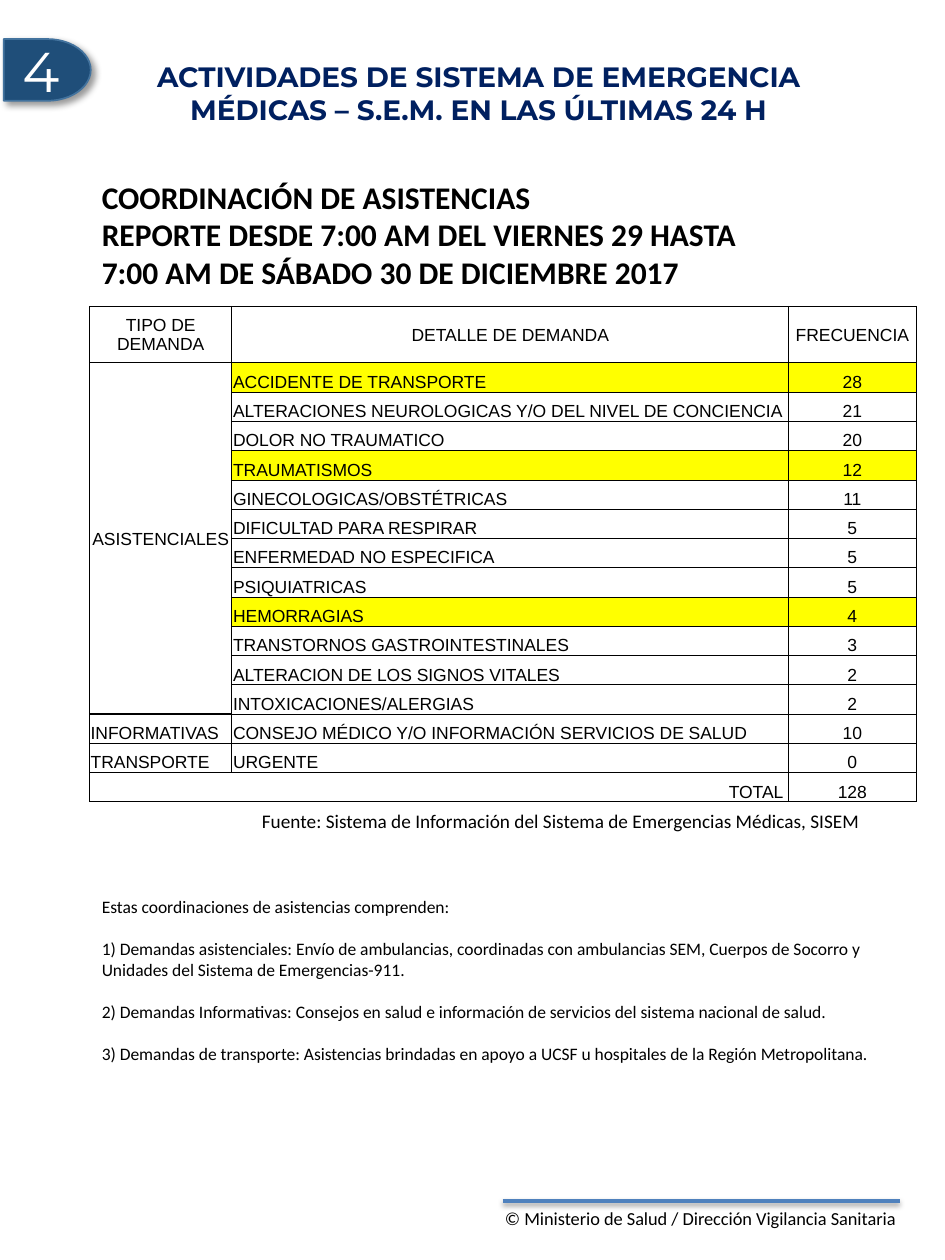
from dataclasses import dataclass

from lxml.etree import SubElement
from pptx import Presentation
from pptx.dml.color import RGBColor
from pptx.enum.shapes import MSO_CONNECTOR, MSO_SHAPE
from pptx.enum.text import MSO_ANCHOR as Anchor, MSO_AUTO_SIZE as AutoSize, PP_ALIGN as Align
from pptx.oxml.ns import qn
from pptx.util import Inches, Pt


@dataclass(frozen=True)
class Theme:
    black: str = "000000"
    white: str = "FFFFFF"
    navy: str = "002060"
    badge: str = "1F4E79"
    badge_edge: str = "43739E"
    rule: str = "4F81BD"
    highlight: str = "FFFF00"
    display: str = "Montserrat"
    body: str = "Calibri"
    grid: str = "Arial"
    number: float = 32
    heading: float = 18
    title: float = 16
    source: float = 11
    footer: float = 10.5
    small: float = 10


THEME = Theme()

HEADERS = ["TIPO DE DEMANDA", "DETALLE DE DEMANDA", "FRECUENCIA"]
CARE = "ASISTENCIALES"
DEMANDS = [
    (CARE, "ACCIDENTE DE TRANSPORTE", 28),
    (CARE, "ALTERACIONES NEUROLOGICAS Y/O DEL NIVEL DE CONCIENCIA", 21),
    (CARE, "DOLOR NO TRAUMATICO", 20),
    (CARE, "TRAUMATISMOS", 12),
    (CARE, "GINECOLOGICAS/OBSTÉTRICAS", 11),
    (CARE, "DIFICULTAD PARA RESPIRAR", 5),
    (CARE, "ENFERMEDAD NO ESPECIFICA", 5),
    (CARE, "PSIQUIATRICAS", 5),
    (CARE, "HEMORRAGIAS", 4),
    (CARE, "TRANSTORNOS GASTROINTESTINALES", 3),
    (CARE, "ALTERACION DE LOS SIGNOS VITALES", 2),
    (CARE, "INTOXICACIONES/ALERGIAS", 2),
    ("INFORMATIVAS", "CONSEJO MÉDICO Y/O INFORMACIÓN SERVICIOS DE SALUD", 10),
    ("TRANSPORTE", "URGENTE", 0),
]
HIGHLIGHTED = {"ACCIDENTE DE TRANSPORTE", "TRAUMATISMOS", "HEMORRAGIAS"}
NOTES = [
    "Estas coordinaciones de asistencias comprenden:",
    "1) Demandas asistenciales: Envío de ambulancias, coordinadas con ambulancias SEM, "
    "Cuerpos de Socorro y Unidades del Sistema de Emergencias-911.",
    "2) Demandas Informativas: Consejos en salud e información de servicios del sistema "
    "nacional de salud.",
    "3) Demandas de transporte: Asistencias brindadas en apoyo a UCSF u hospitales de la "
    "Región Metropolitana.",
]


def color(value):
    return RGBColor.from_string(value)


def write(frame, *texts, font=THEME.body, size=THEME.small, ink=THEME.black,
          bold=False, align=Align.LEFT, gap=0):
    """Fill a text frame with one paragraph for each text."""
    for index, text in enumerate(texts):
        para = frame.add_paragraph() if index else frame.paragraphs[0]
        para.alignment = align
        if index and gap:
            para.space_before = Pt(gap)
        span = para.add_run()
        span.text = text
        span.font.name, span.font.size, span.font.bold = font, Pt(size), bold
        span.font.color.rgb = color(ink)


def add_text(page, box, *texts, wrap=True, grow=True, anchor=Anchor.TOP, **style):
    frame = page.shapes.add_textbox(*map(Inches, box)).text_frame
    frame.word_wrap = wrap
    frame.auto_size = AutoSize.SHAPE_TO_FIT_TEXT if grow else AutoSize.NONE
    frame.vertical_anchor = anchor
    write(frame, *texts, **style)
    return frame


def cast_shadow(shape, alpha, blur, distance, angle):
    effects = SubElement(shape.element.spPr, qn("a:effectLst"))
    shadow = SubElement(effects, qn("a:outerShdw"), blurRad=str(Pt(blur)),
                        dist=str(Pt(distance)), dir=str(angle * 60000), rotWithShape="0")
    ink = SubElement(shadow, qn("a:srgbClr"), val=THEME.black)
    SubElement(ink, qn("a:alpha"), val=str(alpha * 1000))


def add_footer(page, box):
    left, top, width, height = box
    rule = page.shapes.add_connector(MSO_CONNECTOR.STRAIGHT, Inches(left + 0.08), Inches(top),
                                     Inches(left + 3.23), Inches(top))
    rule.line.color.rgb = color(THEME.rule)
    rule.line.width = Pt(2)
    cast_shadow(rule, alpha=38, blur=3.1, distance=1.6, angle=90)
    add_text(page, box, "© Ministerio de Salud / Dirección Vigilancia Sanitaria",
             wrap=False, size=THEME.footer)


def add_badge(page, box, number):
    badge = page.shapes.add_shape(MSO_SHAPE.FLOWCHART_DELAY, *map(Inches, box))
    badge.fill.solid()
    badge.fill.fore_color.rgb = color(THEME.badge)
    badge.line.color.rgb = color(THEME.badge_edge)
    badge.line.width = Pt(1)
    cast_shadow(badge, alpha=40, blur=4, distance=3, angle=45)
    badge.text_frame.vertical_anchor = Anchor.MIDDLE
    write(badge.text_frame, number, font=THEME.display, size=THEME.number,
          ink=THEME.white, align=Align.CENTER)


def add_title(page, box, text):
    frame = add_text(page, box, text, grow=False, anchor=Anchor.MIDDLE, font=THEME.display,
                     size=THEME.title, ink=THEME.navy, bold=True, align=Align.CENTER)
    frame.margin_top = frame.margin_bottom = Inches(0.1)


def style_cell(cell, fill=None, **widths):
    """Set margins, borders (0.5 pt unless given by side) and fill."""
    cell.margin_left = cell.margin_right = cell.margin_top = Inches(0.01)
    cell.margin_bottom = 0
    props = cell._tc.get_or_add_tcPr()
    for side in "LRTB":
        edge = SubElement(props, qn(f"a:ln{side}"), w=str(Pt(widths.get(side, 0.5))))
        ink = SubElement(edge, qn("a:solidFill"))
        SubElement(ink, qn("a:srgbClr"), val=THEME.black)
    if fill:
        cell.fill.solid()
        cell.fill.fore_color.rgb = color(fill)
    else:
        cell.fill.background()


def add_demand_table(page, box):
    rows = [HEADERS, *DEMANDS, ("TOTAL ", "", sum(count for _, _, count in DEMANDS))]
    last = len(rows) - 1
    care_end = sum(kind == CARE for kind, _, _ in DEMANDS)
    table = page.shapes.add_table(len(rows), len(HEADERS), *map(Inches, box)).table
    table.first_row = table.horz_banding = False
    for column, width in zip(table.columns, (1.13, 4.42, 1.01)):
        column.width = Inches(width)
    header_height = 0.45
    for index, row in enumerate(table.rows):
        row.height = Inches((box[3] - header_height) / last if index else header_height)
    table.cell(1, 0).merge(table.cell(care_end, 0))
    table.cell(last, 0).merge(table.cell(last, 1))

    for r, values in enumerate(rows):
        for c, value in enumerate(values):
            cell = table.cell(r, c)
            is_care = c == 0 and 1 <= r <= care_end
            marked = c > 0 and values[1] in HIGHLIGHTED
            widths = {"B": 1} if is_care else {"T": 1} if (r, c) == (care_end + 1, 0) else {}
            style_cell(cell, THEME.highlight if marked else None, **widths)
            if cell.is_spanned:
                continue
            centred = r == 0 or c == 2 or is_care
            cell.vertical_anchor = Anchor.MIDDLE if r == 0 or is_care else Anchor.BOTTOM
            align = Align.CENTER if centred else Align.RIGHT if r == last else Align.LEFT
            write(cell.text_frame, str(value), font=THEME.grid, align=align)


def build_report(deck):
    page = deck.slides.add_slide(deck.slide_layouts[6])
    add_footer(page, (3.91, 9.53, 3.36, 0.45))
    # Heading
    add_badge(page, (0.03, 0.31, 0.69, 0.49), "4")
    add_title(page, (0.77, 0.48, 6.06, 0.51),
              "ACTIVIDADES DE SISTEMA DE EMERGENCIA MÉDICAS – S.E.M. EN LAS ÚLTIMAS 24 H")
    # Demand table with its source and heading
    add_demand_table(page, (0.71, 2.43, 6.56, 3.94))
    add_text(page, (1.98, 6.37, 4.98, 0.29),
             "Fuente: Sistema de Información del Sistema de Emergencias Médicas, SISEM",
             wrap=False, size=THEME.source)
    add_text(page, (0.71, 1.36, 5.44, 1.31), "COORDINACIÓN DE ASISTENCIAS",
             "REPORTE DESDE 7:00 AM DEL VIERNES 29 HASTA 7:00 AM DE SÁBADO 30 DE DICIEMBRE 2017",
             size=THEME.heading, bold=True)
    # Explanatory notes
    add_text(page, (0.71, 7.06, 6.44, 1.45), *NOTES, gap=12)


def main():
    deck = Presentation()
    deck.slide_width, deck.slide_height = Inches(7.5), Inches(10)
    build_report(deck)
    deck.save("out.pptx")


if __name__ == "__main__":
    main()
